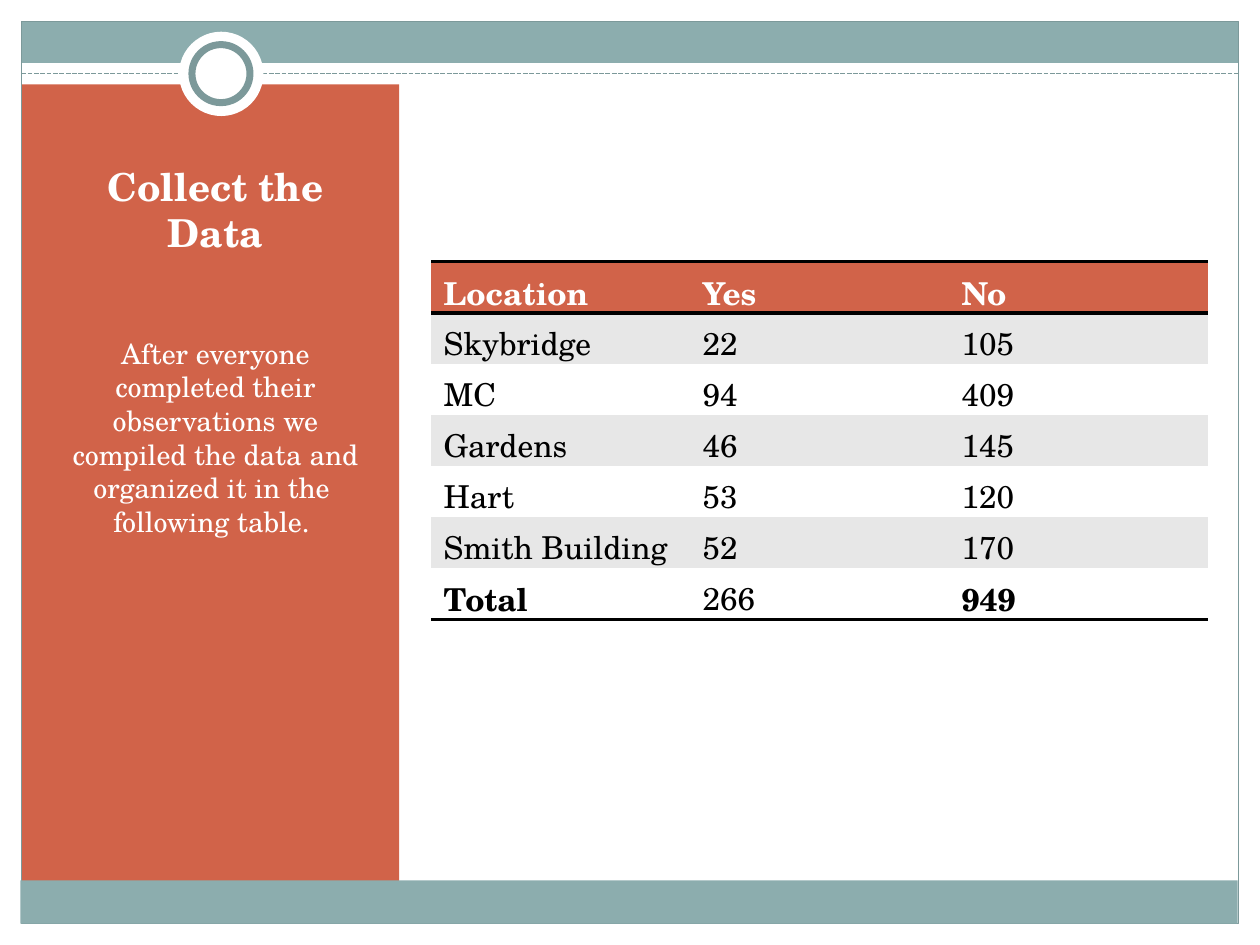
"""Builds the slide that tabulates the observations made at each location."""
import dataclasses

import pptx
import pptx.dml.color
import pptx.enum.dml
import pptx.enum.shapes
import pptx.enum.text
import pptx.oxml.ns
import pptx.util
from lxml import etree

Cm = pptx.util.Cm
Pt = pptx.util.Pt
Kind = pptx.enum.shapes.MSO_SHAPE
Anchor = pptx.enum.text.MSO_ANCHOR
Align = pptx.enum.text.PP_ALIGN
qn = pptx.oxml.ns.qn


@dataclasses.dataclass(frozen=True)
class Theme:
    font: str = "TeX Gyre Schola"
    white: str = "FFFFFF"
    black: str = "000000"
    teal: str = "8CADAE"
    edge: str = "7C999A"
    rust: str = "D16349"
    band: str = "E7E7E7"
    title: float = 22
    body: float = 16
    cell: float = 18


theme = Theme()
rgb = pptx.dml.color.RGBColor.from_string

deck = pptx.Presentation()
deck.slide_width, deck.slide_height = Cm(25.4), Cm(19.05)
slide = deck.slides.add_slide(deck.slide_layouts[6])


def draw(kind, place, fill=None, line=None, width=0.75):
    shape = slide.shapes.add_shape(kind, *map(Cm, place))
    shape.shadow.inherit = False
    if fill:
        shape.fill.solid()
        shape.fill.fore_color.rgb = rgb(fill)
    else:
        shape.fill.background()
    if line:
        shape.line.color.rgb = rgb(line)
        shape.line.width = Pt(width)
    else:
        shape.line.fill.background()


def write(para, text, size, color, bold=False):
    run = para.add_run()
    run.text = text
    run.font.name = theme.font
    run.font.size = Pt(size)
    run.font.bold = bold
    run.font.color.rgb = rgb(color)


draw(Kind.RECTANGLE, (0.43, 0.43, 24.54, 0.84), theme.teal)
draw(Kind.RECTANGLE, (0.43, 1.7, 7.62, 16.31), theme.rust)
draw(Kind.RECTANGLE, (0.43, 0.43, 24.54, 18.19), line=theme.edge)

rule = slide.shapes.add_connector(
    pptx.enum.shapes.MSO_CONNECTOR.STRAIGHT, Cm(0.43), Cm(1.48), Cm(24.97), Cm(1.48))
rule.line.color.rgb = rgb(theme.edge)
rule.line.width = Pt(0.9)
rule.line.dash_style = pptx.enum.dml.MSO_LINE.SQUARE_DOT
etree.SubElement(rule._element.spPr, qn("a:effectLst"))

draw(Kind.OVAL, (3.61, 0.64, 1.7, 1.7), theme.white)
draw(Kind.OVAL, (3.87, 0.9, 1.17, 1.17), theme.white, theme.edge, 4)
draw(Kind.RECTANGLE, (0.41, 17.75, 24.54, 0.87), theme.teal)

story = ("After everyone completed their observations we compiled the data and "
         "organized it in the  following table. ")
blocks = [
    ("Collect the Data", 2.54, 2.74, 0.13, Anchor.BOTTOM, theme.title, True),
    (story, 5.51, 11.51, 1.27, Anchor.TOP, theme.body, False),
]
for text, top, height, inset, anchor, size, bold in blocks:
    frame = slide.shapes.add_textbox(Cm(1.07), Cm(top), Cm(6.55), Cm(height)).text_frame
    frame.word_wrap = True
    frame.vertical_anchor = anchor
    frame.margin_top = Cm(inset)
    para = frame.paragraphs[0]
    para.alignment = Align.CENTER
    para.line_spacing = Pt(size * 1.2)
    write(para, text, size, theme.white, bold)

rows = [
    ("Location", "Yes", "No"),
    ("Skybridge", "22", "105"),
    ("MC", "94", "409"),
    ("Gardens", "46", "145"),
    ("Hart", "53", "120"),
    ("Smith Building", "52", "170"),
    ("Total", "266", "949"),
]
last = len(rows) - 1
strong = {"Total", "949", *rows[0]}
table = slide.shapes.add_table(
    len(rows), 3, Cm(8.69), Cm(5.28), Cm(15.66), Cm(7.21)).table
table.horz_banding = False
table.first_row = False

for r, row in enumerate(rows):
    ruled = {"T": r in (0, 1), "B": r in (0, last)}
    fill = theme.rust if r == 0 else theme.band if r % 2 else theme.white
    ink = theme.white if r == 0 else theme.black
    for c, text in enumerate(row):
        cell = table.cell(r, c)
        write(cell.text_frame.paragraphs[0], text, theme.cell, ink, text in strong)
        props = cell._tc.get_or_add_tcPr()
        for side in "LRTB":
            edge = etree.SubElement(props, qn("a:ln" + side))
            if ruled.get(side):
                edge.set("w", str(Pt(2)))
                paint = etree.SubElement(edge, qn("a:solidFill"))
                etree.SubElement(paint, qn("a:srgbClr"), val=theme.black)
            else:
                etree.SubElement(edge, qn("a:noFill"))
        cell.fill.solid()
        cell.fill.fore_color.rgb = rgb(fill)

deck.save("out.pptx")
